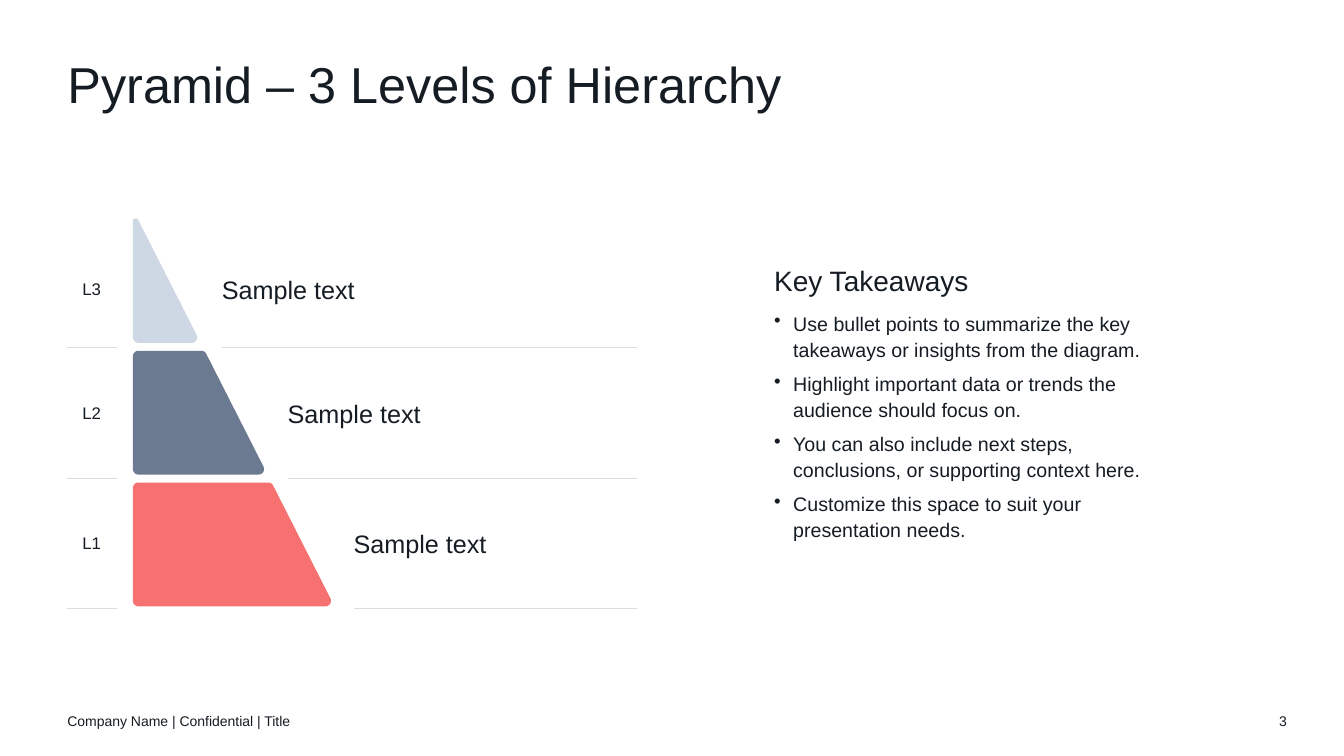
import math
from dataclasses import dataclass

import pptx
import pptx.dml.color
import pptx.enum.shapes
import pptx.enum.text
import pptx.oxml.ns
import pptx.util
from lxml import etree
from pptx.util import Cm

ANCHOR = pptx.enum.text.MSO_ANCHOR
ALIGN = pptx.enum.text.PP_ALIGN
Point = tuple[float, float]


@dataclass(frozen=True)
class Theme:
    font: str = "Arial"
    ink: str = "151C23"
    rule: str = "D9DEE5"
    title: int = 36
    heading: int = 20
    label: int = 18
    body: int = 14
    tag: int = 12
    footer: int = 10


@dataclass(frozen=True)
class Level:
    tag: str
    text: str
    color: str
    text_top: float


THEME = Theme()

# Pyramid levels, top to bottom, lengths in cm
LEVELS = [
    Level("L3", "Sample text", "CED8E4", 6.91),
    Level("L2", "Sample text", "6B7A90", 10.03),
    Level("L1", "Sample text", "F87171", 13.31),
]
MARGIN = 1.7
LEFT, APEX, SLOPE = 3.35, 5.28, 0.508
FIRST_BOTTOM, PITCH, HEIGHT = 8.64, 3.32, 3.12
RADIUS, APEX_RADIUS, ARC_STEPS = 0.14, 0.07, 8
FIRST_RULE, RULE_PITCH, RULE_END = 8.76, 3.29, 16.05
FIRST_TEXT, TEXT_STEP = 5.59, 1.66

TAKEAWAYS = [
    "Use bullet points to summarize the key takeaways or insights from the diagram.",
    "Highlight important data or trends the audience should focus on.",
    "You can also include next steps, conclusions, or supporting context here.",
    "Customize this space to suit your presentation needs.",
]


def rgb(color: str) -> pptx.dml.color.RGBColor:
    return pptx.dml.color.RGBColor.from_string(color)


def format_runs(p, size: int) -> None:
    for r in p.runs:
        r.font.name = THEME.font
        r.font.size = pptx.util.Pt(size)
        r.font.color.rgb = rgb(THEME.ink)


def prepare_frame(tf, anchor=ANCHOR.MIDDLE) -> None:
    tf.word_wrap = True
    tf.auto_size = pptx.enum.text.MSO_AUTO_SIZE.NONE
    tf.vertical_anchor = anchor
    tf.margin_left = tf.margin_right = tf.margin_top = tf.margin_bottom = 0


def add_text(s, text: str, x: float, y: float, w: float, h: float,
             size: int, align=ALIGN.LEFT):
    tf = s.shapes.add_textbox(Cm(x), Cm(y), Cm(w), Cm(h)).text_frame
    prepare_frame(tf)
    tf.text = text
    p = tf.paragraphs[0]
    p.alignment = align
    format_runs(p, size)
    return tf


def add_rule(s, x1: float, x2: float, y: float) -> None:
    line = s.shapes.add_connector(
        pptx.enum.shapes.MSO_CONNECTOR.STRAIGHT, Cm(x1), Cm(y), Cm(x2), Cm(y))
    line.line.color.rgb = rgb(THEME.rule)
    line.line.width = pptx.util.Pt(1)
    etree.SubElement(line._element.spPr, pptx.oxml.ns.qn("a:effectLst"))


def round_corner(before: Point, corner: Point, after: Point, radius: float) -> list[Point]:
    """Points of the arc that is tangent to both edges of a corner."""
    x, y = corner
    a = math.atan2(before[1] - y, before[0] - x)
    b = math.atan2(after[1] - y, after[0] - x)
    half = math.remainder(b - a, math.tau) / 2
    reach = radius / math.sin(abs(half))
    cx, cy = x + reach * math.cos(a + half), y + reach * math.sin(a + half)
    start = a - math.copysign(math.pi / 2, half)
    sweep = 2 * half - math.copysign(math.pi, half)
    angles = [start + sweep * i / ARC_STEPS for i in range(ARC_STEPS + 1)]
    return [(cx + radius * math.cos(t), cy + radius * math.sin(t)) for t in angles]


def add_level_shape(s, index: int, color: str) -> None:
    bottom = FIRST_BOTTOM + index * PITCH
    top = bottom - HEIGHT

    def edge(y: float) -> Point:
        return LEFT + (y - APEX) * SLOPE, y

    corners = [(LEFT, top), edge(top)] if index else [(LEFT, APEX)]
    corners += [edge(bottom), (LEFT, bottom)]
    outline = []
    for i, corner in enumerate(corners):
        radius = APEX_RADIUS if corner == (LEFT, APEX) else RADIUS
        outline += round_corner(corners[i - 1], corner,
                                corners[(i + 1) % len(corners)], radius)
    points = [(Cm(x), Cm(y)) for x, y in outline]
    builder = s.shapes.build_freeform(*points[0])
    builder.add_line_segments(points[1:], close=True)
    sp = builder.convert_to_shape()
    sp.shadow.inherit = False
    sp.fill.solid()
    sp.fill.fore_color.rgb = rgb(color)
    sp.line.fill.background()


def add_level(s, index: int, level: Level) -> None:
    text_x = FIRST_TEXT + index * TEXT_STEP
    rule_y = FIRST_RULE + index * RULE_PITCH
    add_rule(s, MARGIN, 2.95, rule_y)
    add_rule(s, text_x, RULE_END, rule_y)
    add_text(s, level.tag, 1.8, level.text_top, 1.02, 0.76, THEME.tag, ALIGN.CENTER)
    add_text(s, level.text, text_x, level.text_top, 7.11, 0.76, THEME.label)
    add_level_shape(s, index, level.color)


def add_bullet(p) -> None:
    pPr = p._p.get_or_add_pPr()
    pPr.set("marL", str(Cm(0.48)))
    pPr.set("indent", str(-Cm(0.48)))
    etree.SubElement(pPr, pptx.oxml.ns.qn("a:buChar"), char="•")


def add_takeaways(s) -> None:
    tf = add_text(s, "Key Takeaways", 19.51, 4.57, 10.13, 11.05, THEME.heading)
    tf.paragraphs[0].space_after = pptx.util.Pt(3)
    for text in TAKEAWAYS:
        p = tf.add_paragraph()
        p.text = text
        format_runs(p, THEME.body)
    for p in tf.paragraphs:
        p.line_spacing = 1.1
        p.space_before = pptx.util.Pt(6)
    for p in tf.paragraphs[1:]:
        add_bullet(p)


def add_title(s, text: str) -> None:
    title = s.shapes.title
    title.left, title.top, title.width, title.height = Cm(MARGIN), Cm(1.52), Cm(30.48), Cm(1.52)
    tf = title.text_frame
    prepare_frame(tf, ANCHOR.TOP)
    tf.text = text
    p = tf.paragraphs[0]
    p.alignment = ALIGN.LEFT
    p.line_spacing = 0.9
    format_runs(p, THEME.title)


def main() -> None:
    prs = pptx.Presentation()
    prs.slide_width, prs.slide_height = Cm(33.87), Cm(19.05)
    s = prs.slides.add_slide(prs.slide_layouts[5])
    add_title(s, "Pyramid – 3 Levels of Hierarchy")

    # Diagram and takeaways
    for index, level in enumerate(LEVELS):
        add_level(s, index, level)
    add_takeaways(s)

    # Footer
    add_text(s, "Company Name | Confidential | Title", MARGIN, 17.65, 11.43, 1.02, THEME.footer)
    add_text(s, "3", 30.91, 17.65, 1.52, 1.02, THEME.footer, ALIGN.RIGHT)
    prs.save("out.pptx")


if __name__ == "__main__":
    main()
